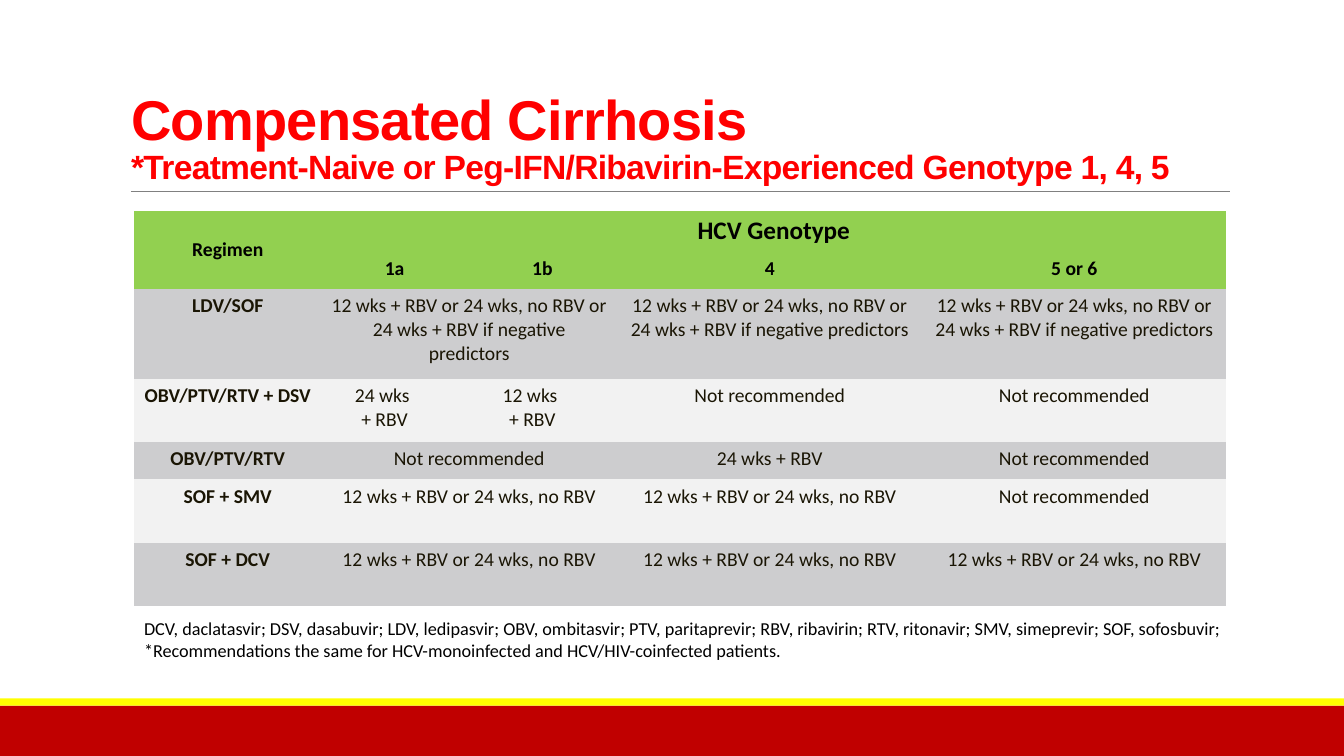
"""Build the slide on treatment regimens for compensated cirrhosis."""
from dataclasses import dataclass

from lxml import etree
from pptx import Presentation
from pptx.dml.color import RGBColor
from pptx.enum import shapes, text
from pptx.util import Cm, Pt

TITLE = ("Compensated Cirrhosis ",
         "*Treatment-Naive or Peg-IFN/Ribavirin-Experienced Genotype 1, 4, 5")
NOTES = (
    "DCV, daclatasvir; DSV, dasabuvir; LDV, ledipasvir; OBV, ombitasvir; "
    "PTV, paritaprevir; RBV, ribavirin; RTV, ritonavir; SMV, simeprevir; "
    "SOF, sofosbuvir;",
    "*Recommendations the same for HCV-monoinfected and HCV/HIV-coinfected patients.",
)
NOT = "Not recommended"
BOTH = "12 wks + RBV or 24 wks, no RBV"
LONG = BOTH + " or 24 wks + RBV if negative predictors"
ROWS = (
    (("Regimen", 1), ("HCV Genotype", 5)),
    (("", 1), ("1a", 2), ("1b", 1), ("4", 1), ("5 or 6", 1)),
    (("LDV/SOF", 1), (LONG, 3), (LONG, 1), (LONG, 1)),
    (("OBV/PTV/RTV + DSV", 1), ("24 wks \n+ RBV", 1), ("12 wks \n+ RBV", 2),
     (NOT, 1), (NOT, 1)),
    (("OBV/PTV/RTV", 1), (NOT, 3), ("24 wks + RBV", 1), (NOT, 1)),
    (("SOF + SMV", 1), (BOTH, 3), (BOTH, 1), (NOT, 1)),
    (("SOF + DCV", 1), (BOTH, 3), (BOTH, 1), (BOTH, 1)),
)
WIDE = (4.72, 3.18, 0.51, 3.76, 7.7, 7.65)
HIGH = (0.94, 0.94, 2.26, 1.6, 0.94, 1.6, 1.6)
HEADS = 2
BARS = ((17.78, 1.27, "C00000"), (17.6, 0.18, "FFFF00"))
PLAIN = "{2D5ABB26-0587-4C30-8999-92F81FD0307C}"


@dataclass(frozen=True)
class Theme:
    head: str = "Arial"
    body: str = "Calibri"
    red: str = "FF0000"
    black: str = "000000"
    ink: str = "1A1504"
    green: str = "92D050"
    bands: tuple = ("CDCDCF", "F2F2F2")
    rule: str = "808080"
    big: int = 40
    sub: int = 24
    group: int = 18
    cell: int = 14
    note: int = 13


LOOK = Theme()


def tint(code):
    return RGBColor.from_string(code)


def write(para, words, face, size, hue, bold=False):
    for n, line in enumerate(words.split("\n")):
        if n:
            para.add_line_break()
        run = para.add_run()
        run.text = line
        font = run.font
        font.name, font.size, font.bold = face, Pt(size), bold
        font.color.rgb = tint(hue)


def add_bars(slide, width):
    for top, tall, hue in BARS:
        bar = slide.shapes.add_shape(
            shapes.MSO_SHAPE.RECTANGLE, 0, Cm(top), width, Cm(tall))
        bar.shadow.inherit = False
        bar.fill.solid()
        bar.fill.fore_color.rgb = tint(hue)
        bar.line.fill.background()
    rule = slide.shapes.add_connector(
        shapes.MSO_CONNECTOR.STRAIGHT, Cm(3.3), Cm(4.82), Cm(30.99), Cm(4.82))
    rule.line.color.rgb = tint(LOOK.rule)
    rule.line.width = Pt(0.5)
    props = rule._element.spPr
    etree.SubElement(props, props.tag.split("}")[0].replace(
        "presentationml", "drawingml") + "}effectLst")


def add_title(slide):
    title = slide.shapes.title
    title.left, title.top = Cm(3.05), Cm(0.79)
    title.width, title.height = Cm(27.94), Cm(4.04)
    frame = title.text_frame
    frame.auto_size = text.MSO_AUTO_SIZE.NONE
    frame.word_wrap = True
    frame.vertical_anchor = text.MSO_ANCHOR.BOTTOM
    para = frame.paragraphs[0]
    para.alignment = text.PP_ALIGN.LEFT
    para.line_spacing = 0.85
    write(para, TITLE[0], LOOK.head, LOOK.big, LOOK.red, True)
    para.add_line_break()
    write(para, TITLE[1], LOOK.head, LOOK.sub, LOOK.red, True)
    for run in para.runs:
        run._r.get_or_add_rPr().set("spc", "-50")


def add_grid(slide):
    grid = slide.shapes.add_table(
        len(ROWS), len(WIDE), Cm(3.38), Cm(5.31),
        Cm(sum(WIDE)), Cm(sum(HIGH))).table
    grid.first_row = grid.horz_banding = False
    grid._tbl.tblPr[0].text = PLAIN
    for col, wide in zip(grid.columns, WIDE):
        col.width = Cm(wide)
    for r, row in enumerate(ROWS):
        grid.rows[r].height = Cm(HIGH[r])
        head = r < HEADS
        for cell in grid.rows[r].cells:
            cell.fill.solid()
            cell.fill.fore_color.rgb = tint(
                LOOK.green if head else LOOK.bands[(r - HEADS) % 2])
        c = 0
        for words, span in row:
            cell = grid.cell(r, c)
            if span > 1:
                cell.merge(grid.cell(r, c + span - 1))
            if words:
                para = cell.text_frame.paragraphs[0]
                para.alignment = text.PP_ALIGN.CENTER
                write(para, words, LOOK.body,
                      LOOK.group if span == 5 else LOOK.cell,
                      LOOK.black if head else LOOK.ink, head or c == 0)
            c += span
    first = grid.cell(0, 0)
    first.merge(grid.cell(1, 0))
    first.vertical_anchor = text.MSO_ANCHOR.MIDDLE


def add_notes(slide):
    frame = slide.shapes.add_textbox(
        Cm(3.38), Cm(15.44), Cm(27.65), Cm(1.93)).text_frame
    frame.word_wrap = True
    for n, line in enumerate(NOTES):
        para = frame.add_paragraph() if n else frame.paragraphs[0]
        write(para, line, LOOK.body, LOOK.note, LOOK.black)


def main():
    deck = Presentation()
    deck.slide_width, deck.slide_height = Cm(33.87), Cm(19.05)
    slide = deck.slides.add_slide(deck.slide_layouts[5])
    add_bars(slide, deck.slide_width)
    add_title(slide)
    add_grid(slide)
    add_notes(slide)
    deck.save("out.pptx")


if __name__ == "__main__":
    main()
